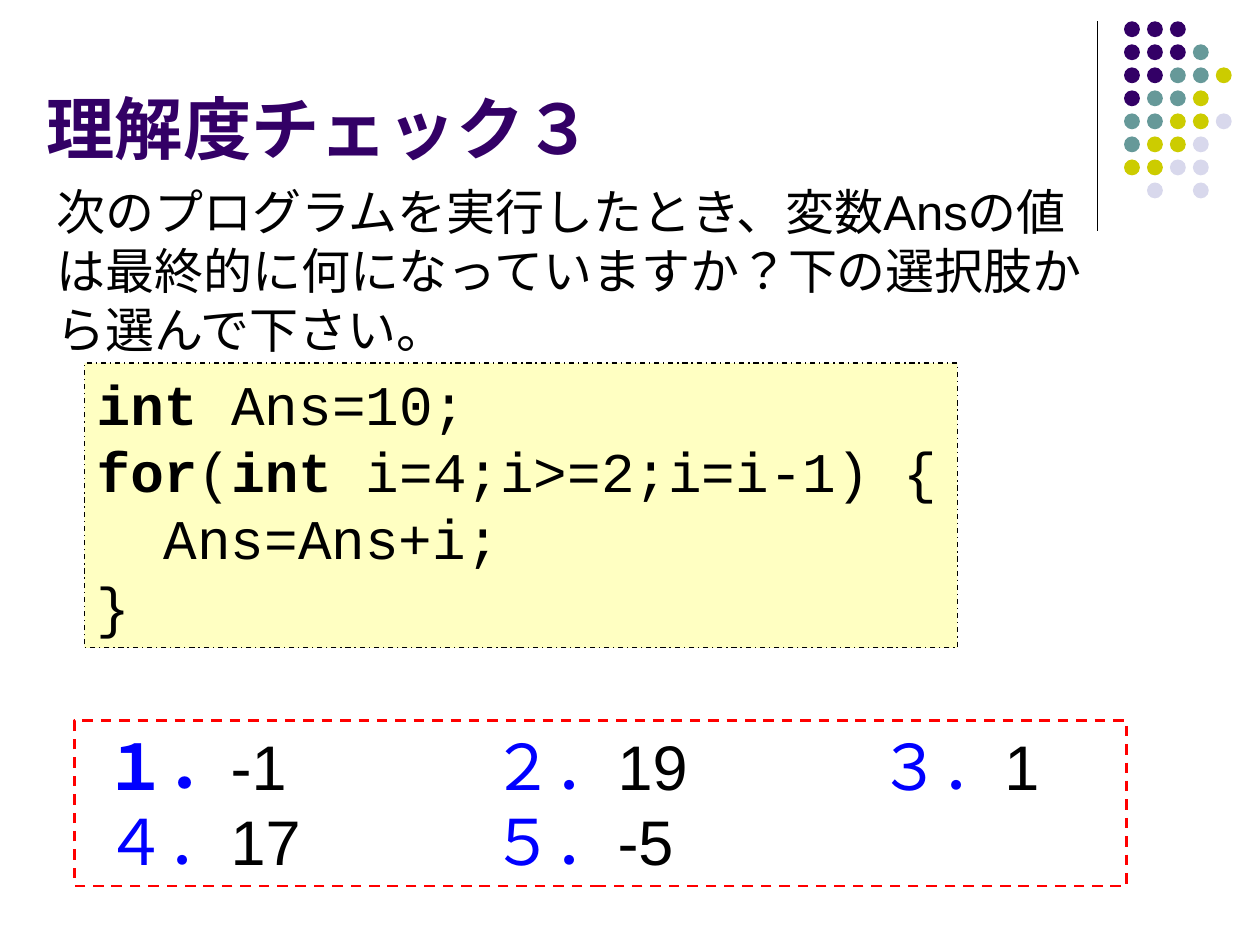
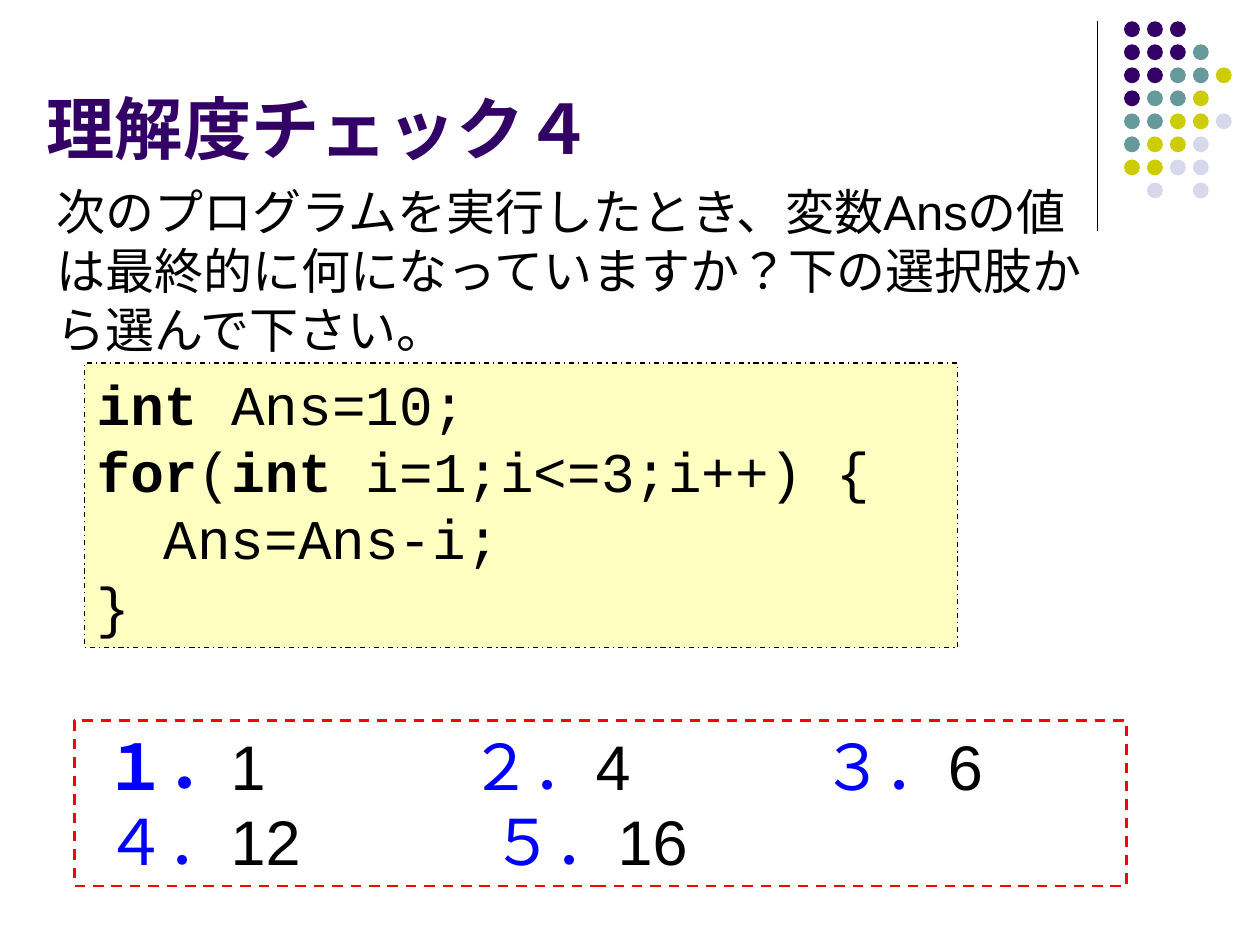
from dataclasses import dataclass

from lxml import etree
from pptx import Presentation
from pptx import util as u
from pptx.dml.color import RGBColor
from pptx.enum import dml, lang, shapes, text
from pptx.oxml import ns

PURPLE = RGBColor(0x33, 0x00, 0x66)
TEAL = RGBColor(0x66, 0x99, 0x99)
OLIVE = RGBColor(0xCC, 0xCC, 0x00)
LAVENDER = RGBColor(0xD8, 0xD8, 0xEC)
BLACK = RGBColor(0x00, 0x00, 0x00)
BLUE = RGBColor(0x00, 0x00, 0xFF)
RED = RGBColor(0xFF, 0x00, 0x00)
CREAM = RGBColor(0xFF, 0xFF, 0xC2)

BODY_FONT = "Arial"
CODE_FONT = "Courier New"

DOT_COLORS = {"P": PURPLE, "T": TEAL, "O": OLIVE, "L": LAVENDER}
DOT_ROWS = ("PPP", "PPPT", "PPTTO", "PTTO", "TTOOL", "TOOL", "OOLL", " L L")
DOT_SIZE = u.Cm(0.32)
DOT_LEFT, DOT_TOP = u.Cm(22.66), u.Cm(0.43)
DOT_STEP_X, DOT_STEP_Y = u.Cm(1.85) / 4, u.Cm(3.25) / 7

QUESTION = ("次のプログラムを実行したとき、変数Ansの値は最終的に何になっていますか？"
            "下の選択肢から選んで下さい。")
LABELS = ("１．", "２．", "３．", "４．", "５．")
FIRST_ROW_COUNT = 3


@dataclass(frozen=True)
class Area:
    left: float
    top: float
    width: float
    height: float

    def lengths(self) -> tuple[u.Length, ...]:
        return tuple(u.Cm(side) for side in (self.left, self.top, self.width, self.height))


@dataclass(frozen=True)
class Quiz:
    title: str
    loop: str
    step: str
    answers: tuple[str, ...]
    first_row_tabs: tuple[float, ...]


TITLE_AREA = Area(0.69, 1.52, 20.96, 2.01)
QUESTION_AREA = Area(0.89, 3.53, 21.21, 3.84)
CODE_AREA = Area(1.7, 7.32, 17.6, 5.74)
CHOICES_AREA = Area(1.5, 14.53, 21.21, 3.33)
CODE_INDENT = u.Cm(1.35)
CHOICES_INSET = u.Cm(0.61)
SECOND_ROW_TABS = (7.8,)

QUIZZES = (
    Quiz("理解度チェック３", "i=4;i>=2;i=i-1) {", "Ans=Ans+i;",
         ("-1", "19", "1", "17", "-5"), (7.8, 15.6)),
    Quiz("理解度チェック４", "i=1;i<=3;i++) {", "Ans=Ans-i;",
         ("1", "4", "6", "12", "16"), (7.36, 14.46)),
)


def add_span(para, words: str, *, size: float, color: RGBColor = BLACK,
             bold: bool = False, font: str = BODY_FONT) -> None:
    span = para.add_run()
    span.text = words
    span.font.size = u.Pt(size)
    span.font.color.rgb = color
    span.font.bold = bold
    span.font.name = font
    span.font.language_id = lang.MSO_LANGUAGE_ID.JAPANESE


def next_para(frame, index: int):
    para = frame.add_paragraph() if index else frame.paragraphs[0]
    para.alignment = text.PP_ALIGN.LEFT
    return para


def set_tabs(para, stops: tuple[float, ...]) -> None:
    tabs = etree.SubElement(para._p.get_or_add_pPr(), ns.qn("a:tabLst"))
    for stop in stops:
        etree.SubElement(tabs, ns.qn("a:tab"), pos=str(u.Cm(stop)), algn="l")


def prepare_frame(frame, anchor=text.MSO_ANCHOR.TOP) -> None:
    frame.word_wrap = True
    frame.vertical_anchor = anchor
    frame.margin_left = frame.margin_right = u.Cm(0.25)
    frame.margin_top = frame.margin_bottom = u.Cm(0.13)


def add_panel(page, area: Area, *, line: RGBColor, width: float,
              dash, fill: RGBColor | None = None):
    box = page.shapes.add_shape(shapes.MSO_SHAPE.RECTANGLE, *area.lengths())
    box.shadow.inherit = False
    if fill is None:
        box.fill.background()
    else:
        box.fill.solid()
        box.fill.fore_color.rgb = fill
    box.line.color.rgb = line
    box.line.width = u.Pt(width)
    box.line.dash_style = dash
    prepare_frame(box.text_frame)
    return box.text_frame


def add_corner(page) -> None:
    rule = page.shapes.add_connector(shapes.MSO_CONNECTOR.STRAIGHT,
                                     u.Cm(22.12), u.Cm(0.43), u.Cm(22.12), u.Cm(4.65))
    rule.line.color.rgb = BLACK
    rule.line.width = u.Pt(0.75)
    etree.SubElement(rule._element.spPr, ns.qn("a:effectLst"))
    group = page.shapes.add_group_shape()
    for row, codes in enumerate(DOT_ROWS):
        for column, code in enumerate(codes):
            if code not in DOT_COLORS:
                continue
            dot = group.shapes.add_shape(
                shapes.MSO_SHAPE.OVAL, round(DOT_LEFT + column * DOT_STEP_X),
                round(DOT_TOP + row * DOT_STEP_Y), DOT_SIZE, DOT_SIZE)
            dot.shadow.inherit = False
            dot.fill.solid()
            dot.fill.fore_color.rgb = DOT_COLORS[code]
            dot.line.fill.background()


def set_title(page, words: str) -> None:
    title = page.shapes.title
    title.left, title.top, title.width, title.height = TITLE_AREA.lengths()
    prepare_frame(title.text_frame, text.MSO_ANCHOR.BOTTOM)
    title.text_frame.auto_size = text.MSO_AUTO_SIZE.NONE
    add_span(next_para(title.text_frame, 0), words, size=39, color=PURPLE, bold=True)


def add_choices(page, quiz: Quiz) -> None:
    frame = add_panel(page, CHOICES_AREA, line=RED, width=1.5,
                      dash=dml.MSO_LINE.DASH)
    frame.margin_left = CHOICES_INSET
    choices = list(zip(LABELS, quiz.answers))
    rows = ((choices[:FIRST_ROW_COUNT], quiz.first_row_tabs),
            (choices[FIRST_ROW_COUNT:], SECOND_ROW_TABS))
    for index, (row, stops) in enumerate(rows):
        para = next_para(frame, index)
        set_tabs(para, stops)
        for column, (label, answer) in enumerate(row):
            add_span(para, label, size=36, color=BLUE, bold=label == LABELS[0])
            gap = "\t" if column < len(row) - 1 else ""
            add_span(para, answer + gap, size=36)


def add_question(page) -> None:
    box = page.shapes.add_textbox(*QUESTION_AREA.lengths())
    prepare_frame(box.text_frame)
    add_span(next_para(box.text_frame, 0), QUESTION, size=28)


def add_code(page, quiz: Quiz) -> None:
    frame = add_panel(page, CODE_AREA, line=BLACK, width=0.75,
                      dash=dml.MSO_LINE.DASH_DOT, fill=CREAM)
    lines = (
        (0, (("int ", True), ("Ans=10;", False))),
        (0, (("for", True), ("(", False), ("int ", True), (quiz.loop, False))),
        (CODE_INDENT, ((quiz.step, False),)),
        (0, (("}", False),)),
    )
    for index, (indent, spans) in enumerate(lines):
        para = next_para(frame, index)
        para._p.get_or_add_pPr().set("marL", str(indent))
        for words, bold in spans:
            add_span(para, words, size=32, bold=bold, font=CODE_FONT)


def main() -> None:
    deck = Presentation()
    deck.slide_width, deck.slide_height = u.Cm(25.4), u.Cm(19.05)
    title_only = deck.slide_layouts[5]
    for quiz in QUIZZES:
        page = deck.slides.add_slide(title_only)
        add_corner(page)
        set_title(page, quiz.title)
        add_choices(page, quiz)
        add_question(page)
        add_code(page, quiz)
    deck.save("out.pptx")


if __name__ == "__main__":
    main()
